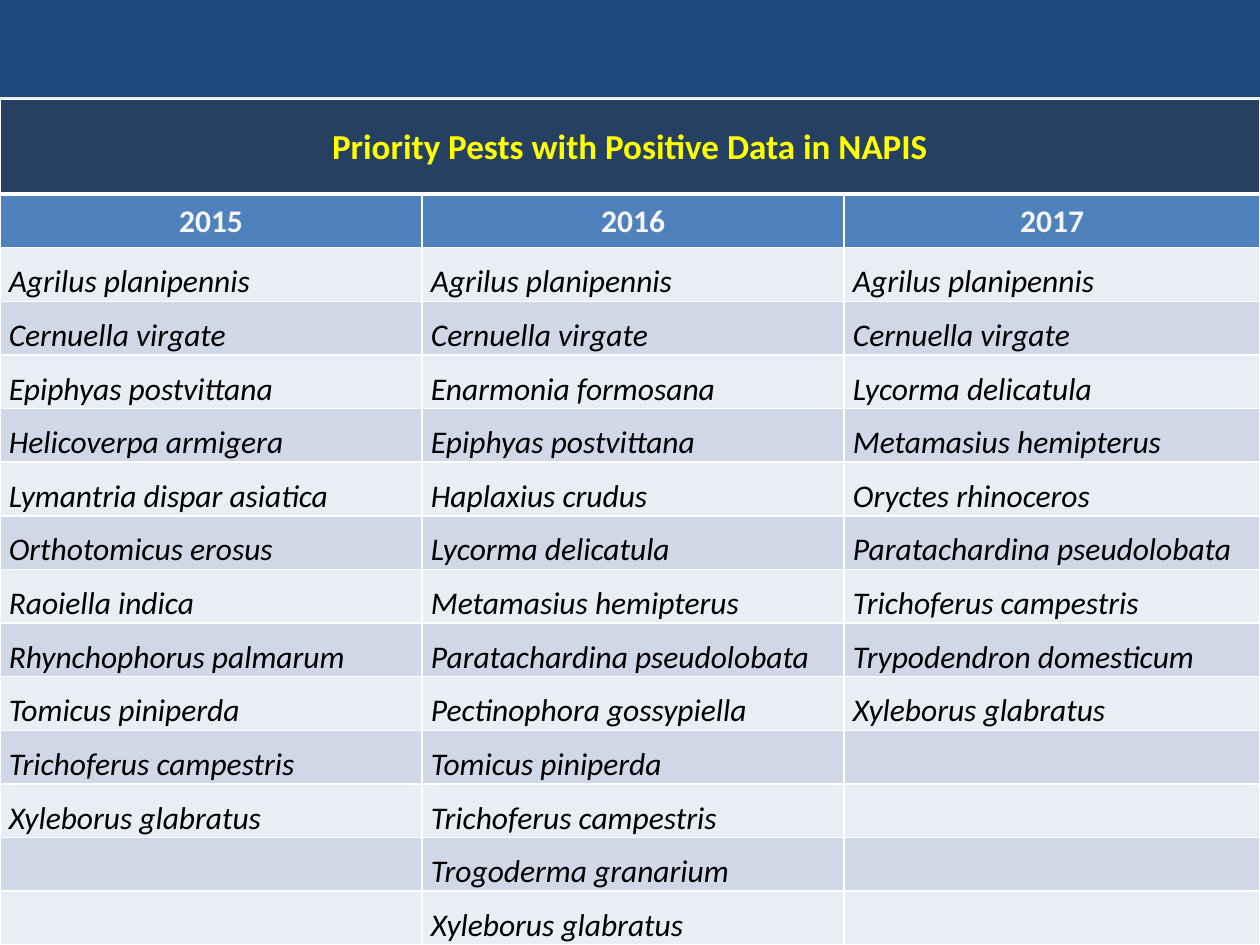
from dataclasses import dataclass
from itertools import zip_longest

from lxml import etree
from pptx import Presentation
from pptx.dml.color import RGBColor
from pptx.enum.shapes import MSO_SHAPE
from pptx.enum.text import MSO_ANCHOR, PP_ALIGN
from pptx.oxml.ns import qn
from pptx.table import _Cell
from pptx.util import Inches, Pt

RECTANGLE = MSO_SHAPE.RECTANGLE
MIDDLE, BOTTOM = MSO_ANCHOR.MIDDLE, MSO_ANCHOR.BOTTOM
LEFT, CENTER = PP_ALIGN.LEFT, PP_ALIGN.CENTER

BACKGROUND = RGBColor(0xEE, 0xEC, 0xE1)
BANNER_BLUE = RGBColor(0x1F, 0x49, 0x7D)
TITLE_NAVY = RGBColor(0x25, 0x40, 0x61)
HEADER_BLUE = RGBColor(0x4F, 0x81, 0xBD)
BANDS = (RGBColor(0xE9, 0xED, 0xF4), RGBColor(0xD0, 0xD8, 0xE8))
YELLOW = RGBColor(0xFF, 0xFF, 0x00)
PALE = RGBColor(0xF4, 0xF6, 0xFA)
BLACK = RGBColor(0, 0, 0)
WHITE = RGBColor(0xFF, 0xFF, 0xFF)

FONT = "Calibri"
SLIDE_WIDTH, SLIDE_HEIGHT = 10, 7.5
TABLE_TOP = 0.79
TITLE_HEIGHT = 0.75
COLUMN_WIDTHS = (3.35, 3.35, 3.3)
TITLE = "Priority Pests with Positive Data in NAPIS"


@dataclass(frozen=True)
class YearList:
    year: str
    pests: tuple[str, ...]


YEAR_LISTS = (
    YearList("2015", (
        "Agrilus planipennis", "Cernuella virgate", "Epiphyas postvittana",
        "Helicoverpa armigera", "Lymantria dispar asiatica",
        "Orthotomicus erosus", "Raoiella indica", "Rhynchophorus palmarum",
        "Tomicus piniperda", "Trichoferus campestris", "Xyleborus glabratus")),
    YearList("2016", (
        "Agrilus planipennis", "Cernuella virgate", "Enarmonia formosana",
        "Epiphyas postvittana", "Haplaxius crudus", "Lycorma delicatula",
        "Metamasius hemipterus", "Paratachardina pseudolobata",
        "Pectinophora gossypiella", "Tomicus piniperda",
        "Trichoferus campestris", "Trogoderma granarium",
        "Xyleborus glabratus")),
    YearList("2017", (
        "Agrilus planipennis", "Cernuella virgate", "Lycorma delicatula",
        "Metamasius hemipterus", "Oryctes rhinoceros",
        "Paratachardina pseudolobata", "Trichoferus campestris",
        "Trypodendron domesticum", "Xyleborus glabratus")),
)


def set_borders(cell: _Cell, top: float = 1, bottom: float = 1) -> None:
    """Draw white cell borders, with widths in points."""
    properties = cell._tc.get_or_add_tcPr()
    for side, width in (("L", 1), ("R", 1), ("T", top), ("B", bottom)):
        line = etree.SubElement(properties, qn(f"a:ln{side}"), w=str(Pt(width)))
        fill = etree.SubElement(line, qn("a:solidFill"))
        etree.SubElement(fill, qn("a:srgbClr"), val=str(WHITE))


def write_cell(cell: _Cell, text: str, *, fill: RGBColor, color: RGBColor,
               size: float = 18, bold: bool = False, italic: bool = False,
               align: PP_ALIGN = CENTER, anchor: MSO_ANCHOR = MIDDLE,
               indent: float = 0.01) -> None:
    cell.fill.solid()
    cell.fill.fore_color.rgb = fill
    cell.vertical_anchor = anchor
    cell.margin_left = Inches(indent)
    cell.margin_right = cell.margin_top = Inches(0.01)
    cell.margin_bottom = 0
    paragraph = cell.text_frame.paragraphs[0]
    paragraph.alignment = align
    paragraph.font.size = Pt(size)
    if text:
        run = paragraph.add_run()
        run.text = text
        font = run.font
        font.name, font.size = FONT, Pt(size)
        font.bold, font.italic = bold, italic
        font.color.rgb = color


def add_banner(slide) -> None:
    banner = slide.shapes.add_shape(
        RECTANGLE, 0, 0, Inches(SLIDE_WIDTH), Inches(0.77))
    banner.shadow.inherit = False
    banner.fill.solid()
    banner.fill.fore_color.rgb = BANNER_BLUE
    banner.line.fill.background()


def add_pest_table(slide) -> None:
    pest_rows = list(zip_longest(*(item.pests for item in YEAR_LISTS), fillvalue=""))
    row_count = len(pest_rows) + 2
    table_height = SLIDE_HEIGHT - TABLE_TOP
    table = slide.shapes.add_table(
        row_count, len(YEAR_LISTS), 0, Inches(TABLE_TOP),
        Inches(SLIDE_WIDTH), Inches(table_height)).table

    # Grid: a tall title row, the rest share the remaining height
    row_height = (table_height - TITLE_HEIGHT) / (row_count - 1)
    for column, width in zip(table.columns, COLUMN_WIDTHS):
        column.width = Inches(width)
    for index, row in enumerate(table.rows):
        row.height = Inches(row_height if index else TITLE_HEIGHT)
        for cell in row.cells:
            set_borders(cell, top=3 if index == 1 else 1,
                        bottom=3 if index == 0 else 1)

    # Title across all years
    title_cell = table.cell(0, 0)
    title_cell.merge(table.cell(0, len(YEAR_LISTS) - 1))
    write_cell(title_cell, TITLE, fill=TITLE_NAVY, color=YELLOW, size=20, bold=True)

    # Year headings
    for column, item in enumerate(YEAR_LISTS):
        write_cell(table.cell(1, column), item.year,
                   fill=HEADER_BLUE, color=PALE, bold=True)

    # Banded pest names
    for index, pests in enumerate(pest_rows):
        for column, pest in enumerate(pests):
            write_cell(table.cell(index + 2, column), pest,
                       fill=BANDS[index % 2], color=BLACK, italic=True,
                       align=LEFT, anchor=BOTTOM, indent=0.07)


def main() -> None:
    presentation = Presentation()
    presentation.slide_width = Inches(SLIDE_WIDTH)
    presentation.slide_height = Inches(SLIDE_HEIGHT)
    slide = presentation.slides.add_slide(presentation.slide_layouts[6])
    slide.background.fill.solid()
    slide.background.fill.fore_color.rgb = BACKGROUND
    add_banner(slide)
    add_pest_table(slide)
    presentation.save("out.pptx")


if __name__ == "__main__":
    main()
